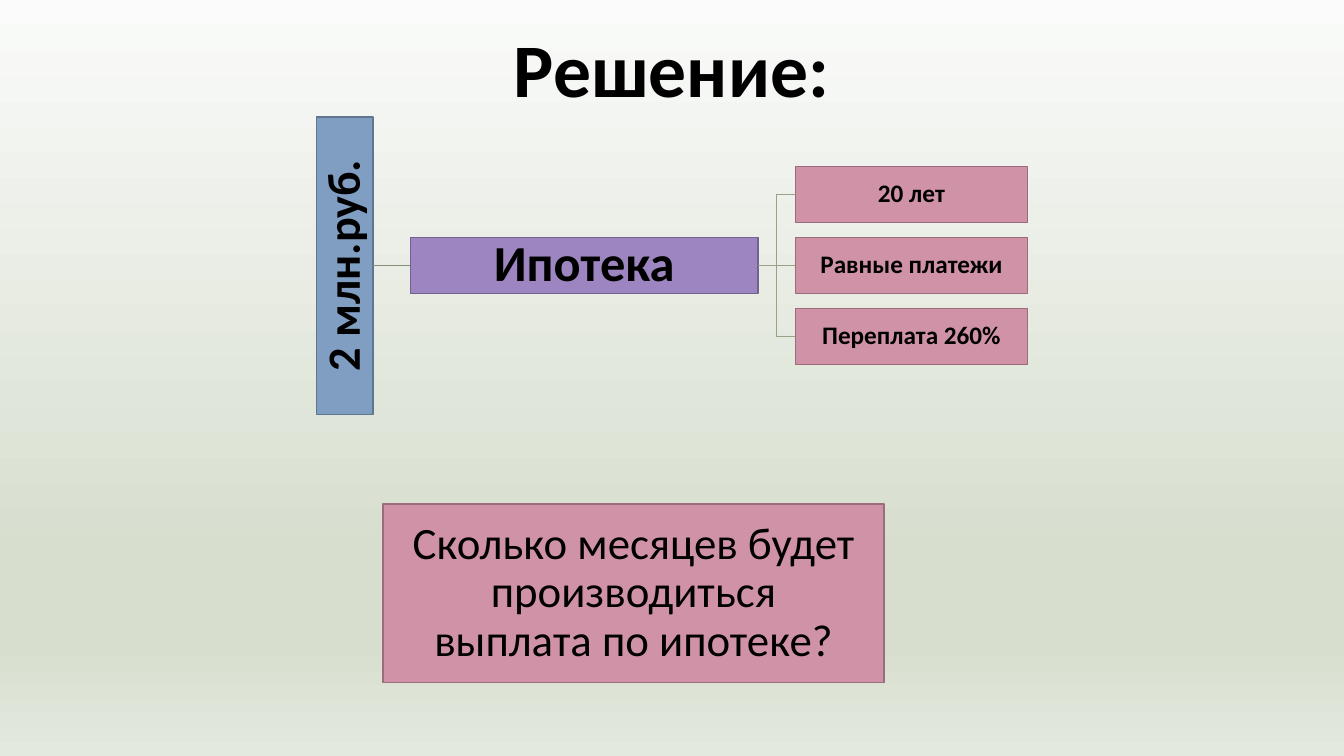
from lxml import etree
from pptx import Presentation
from pptx.dml.color import RGBColor
from pptx.enum.shapes import MSO_CONNECTOR, MSO_SHAPE
from pptx.enum.text import MSO_ANCHOR, PP_ALIGN
from pptx.oxml.ns import qn
from pptx.util import Inches, Pt

RECTANGLE = MSO_SHAPE.RECTANGLE
STRAIGHT, ELBOW = MSO_CONNECTOR.STRAIGHT, MSO_CONNECTOR.ELBOW
CENTER, MIDDLE = PP_ALIGN.CENTER, MSO_ANCHOR.MIDDLE
RIGHT_SIDE, LEFT_SIDE = 3, 1

BLACK = RGBColor(0x00, 0x00, 0x00)
BLUE, BLUE_EDGE = RGBColor(0x80, 0x9E, 0xC2), RGBColor(0x5F, 0x75, 0x90)
PURPLE, PURPLE_EDGE = RGBColor(0x9C, 0x85, 0xC0), RGBColor(0x73, 0x62, 0x8E)
PINK, PINK_EDGE = RGBColor(0xD0, 0x92, 0xA7), RGBColor(0x9A, 0x6C, 0x7C)
ROOT_LINK, BRANCH_LINK = RGBColor(0x84, 0x91, 0x75), RGBColor(0x96, 0xA4, 0x85)
BACKGROUND_STOPS = [
    (0, RGBColor(0xFA, 0xFB, 0xFA)),
    (74, RGBColor(0xD7, 0xDE, 0xCE)),
    (85, RGBColor(0xD7, 0xDE, 0xCE)),
    (100, RGBColor(0xE4, 0xE9, 0xDE)),
]

BAR = 0.56          # thickness of every bar in the tree
COLUMN_GAP = 0.37
ROW_PITCH = 0.705
BRANCH_WIDTH = 3.45
LEAF_WIDTH = 2.3


def write_text(shape, text, size, bold=False, inset=0.0, space_after=0):
    frame = shape.text_frame
    frame.word_wrap = True
    frame.vertical_anchor = MIDDLE
    frame.margin_left = frame.margin_right = Inches(inset)
    frame.margin_top = frame.margin_bottom = Inches(inset)
    para = frame.paragraphs[0]
    para.alignment = CENTER
    para.line_spacing = 0.9
    para.space_after = Pt(space_after)
    span = para.add_run()
    span.text = text
    span.font.name = "Calibri"
    span.font.size = Pt(size)
    span.font.bold = bold
    span.font.color.rgb = BLACK


def add_box(page, box, text, fill, edge, **text_format):
    shape = page.shapes.add_shape(RECTANGLE, *map(Inches, box))
    shape.shadow.inherit = False
    shape.fill.solid()
    shape.fill.fore_color.rgb = fill
    shape.line.color.rgb = edge
    shape.line.width = Pt(1)
    write_text(shape, text, **text_format)
    return shape


def link(page, start, end, color, kind=STRAIGHT):
    """Join the right side of start to the left side of end."""
    connector = page.shapes.add_connector(kind, 0, 0, 0, 0)
    connector.begin_connect(start, RIGHT_SIDE)
    connector.end_connect(end, LEFT_SIDE)
    connector.line.color.rgb = color
    connector.line.width = Pt(1)
    properties = connector._element.find(qn("p:spPr"))
    etree.SubElement(properties, qn("a:effectLst"))


def paint_background(page):
    page.background.fill.gradient()
    gradient = next(page.element.iter(qn("a:gradFill")))
    for child in list(gradient):
        gradient.remove(child)
    stops = etree.SubElement(gradient, qn("a:gsLst"))
    for percent, color in BACKGROUND_STOPS:
        stop = etree.SubElement(stops, qn("a:gs"), pos=str(percent * 1000))
        etree.SubElement(stop, qn("a:srgbClr"), val=str(color))
    etree.SubElement(gradient, qn("a:lin"), ang=str(90 * 60000), scaled="0")


def add_title(page, box, text):
    title = page.shapes.title
    title.left, title.top, title.width, title.height = map(Inches, box)
    write_text(title, text, size=54, bold=True, inset=0.05)


def add_tree(page, box, root_text, branch_text, leaf_texts):
    """Draw a tree from left to right: upright root, branch, column of leaves."""
    left, top, height = box
    middle_top = top + (height - BAR) / 2
    branch_left = left + BAR + COLUMN_GAP
    leaf_left = branch_left + BRANCH_WIDTH + COLUMN_GAP

    root = add_box(page, (left, top, BAR, height), root_text, BLUE, BLUE_EDGE,
                   size=33, bold=True, inset=0.02)
    root.text_frame._txBody.bodyPr.set("vert", "vert270")
    branch = add_box(page, (branch_left, middle_top, BRANCH_WIDTH, BAR),
                     branch_text, PURPLE, PURPLE_EDGE,
                     size=36, bold=True, inset=0.03)
    link(page, root, branch, ROOT_LINK)

    middle_row = (len(leaf_texts) - 1) / 2
    for row, text in enumerate(leaf_texts):
        offset = row - middle_row
        leaf_top = middle_top + offset * ROW_PITCH
        leaf = add_box(page, (leaf_left, leaf_top, LEAF_WIDTH, BAR), text,
                       PINK, PINK_EDGE, size=18, bold=True, inset=0.01)
        link(page, branch, leaf, BRANCH_LINK, ELBOW if offset else STRAIGHT)


def main():
    deck = Presentation()
    deck.slide_width, deck.slide_height = Inches(13.33), Inches(7.5)
    page = deck.slides.add_slide(deck.slide_layouts.get_by_name("Title Only"))
    paint_background(page)
    add_title(page, (0.91, 0, 11.5, 1.45), "Решение:")
    add_box(page, (3.8, 5, 4.97, 1.77),
            "Сколько месяцев будет производиться выплата по ипотеке?",
            PINK, PINK_EDGE, size=32, inset=0.25)
    add_tree(page, (3.14, 1.16, 2.95), "2 млн.руб.", "Ипотека",
             ["20 лет", "Равные платежи", "Переплата 260%"])
    deck.save("out.pptx")


if __name__ == "__main__":
    main()
